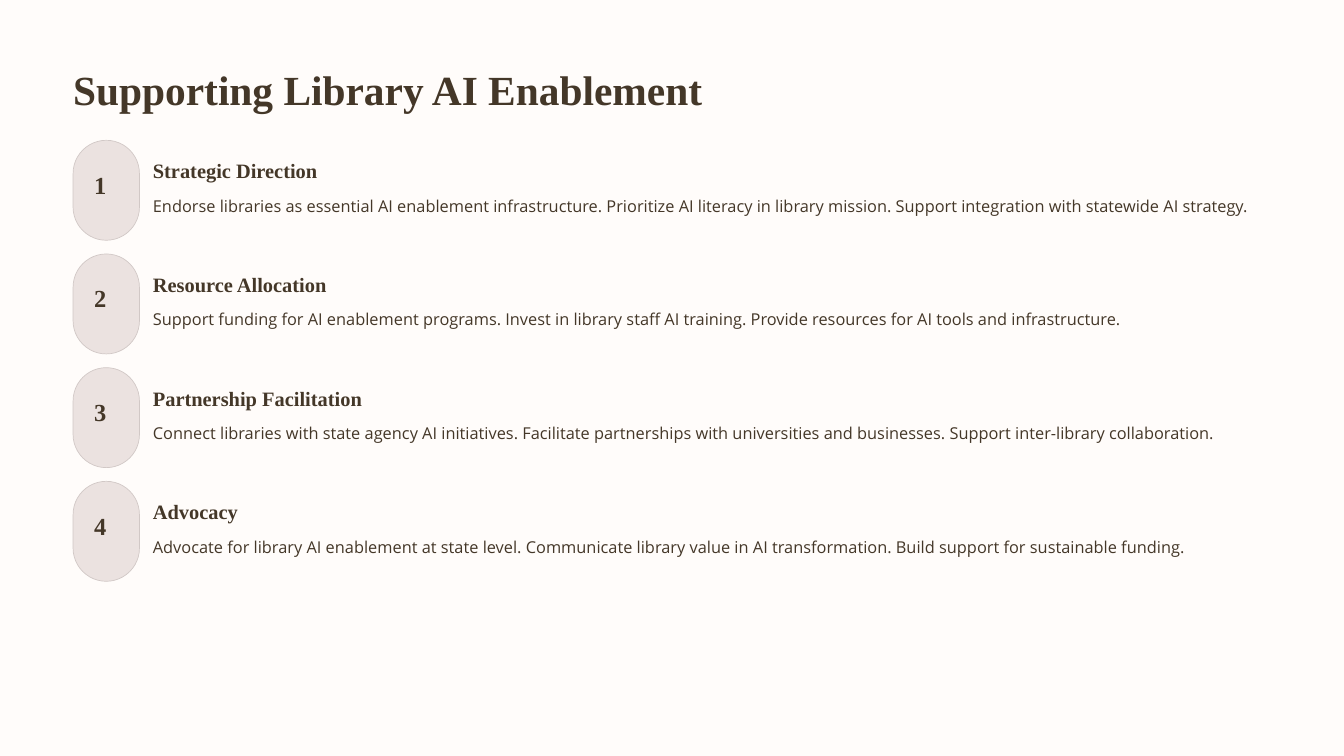
"""Build the slide on supporting library AI enablement."""
from pptx import Presentation
from pptx.dml.color import RGBColor
from pptx.enum.shapes import MSO_SHAPE
from pptx.enum.text import MSO_ANCHOR, MSO_AUTO_SIZE, PP_ALIGN
from pptx.util import Inches, Pt

PILL = MSO_SHAPE.ROUNDED_RECTANGLE
TOP = MSO_ANCHOR.TOP
LEFT = PP_ALIGN.LEFT
NO_AUTOFIT = MSO_AUTO_SIZE.NONE

TITLE = "Supporting Library AI Enablement"
SUPPORTS = [
    ("Strategic Direction",
     "Endorse libraries as essential AI enablement infrastructure. Prioritize AI literacy "
     "in library mission. Support integration with statewide AI strategy."),
    ("Resource Allocation",
     "Support funding for AI enablement programs. Invest in library staff AI training. "
     "Provide resources for AI tools and infrastructure."),
    ("Partnership Facilitation",
     "Connect libraries with state agency AI initiatives. Facilitate partnerships with "
     "universities and businesses. Support inter-library collaboration."),
    ("Advocacy",
     "Advocate for library AI enablement at state level. Communicate library value in AI "
     "transformation. Build support for sustainable funding."),
]

COLORS = {"background": "FFFCFA", "text": "443728", "pill": "EBE2E0", "outline": "D1C8C6"}
SERIF, SANS = "Times New Roman", "Open Sans"
MARGIN, TEXT_LEFT = 0.87, 1.82
FIRST_TOP, LAST_TOP = 1.67, 5.73
PITCH = (LAST_TOP - FIRST_TOP) / (len(SUPPORTS) - 1)


def color(name):
    return RGBColor.from_string(COLORS[name])


def write(holder, text, font, size, spacing, bold=True):
    frame = holder.text_frame
    frame.auto_size = NO_AUTOFIT
    frame.word_wrap = False
    frame.vertical_anchor = TOP
    frame.margin_left = frame.margin_right = frame.margin_top = frame.margin_bottom = 0
    paragraph = frame.paragraphs[0]
    paragraph.alignment = LEFT
    paragraph.line_spacing = Pt(spacing)
    run = paragraph.add_run()
    run.text = text
    run.font.name = font
    run.font.size = Pt(size)
    run.font.bold = bold
    run.font.color.rgb = color("text")


def add_text(slide, box, *style, **options):
    write(slide.shapes.add_textbox(*map(Inches, box)), *style, **options)


def add_support(slide, number, heading, detail):
    top = FIRST_TOP + (number - 1) * PITCH
    pill = slide.shapes.add_shape(PILL, *map(Inches, (MARGIN, top, 0.79, 1.19)))
    pill.adjustments[0] = 0.5
    pill.shadow.inherit = False
    pill.fill.solid()
    pill.fill.fore_color.rgb = color("pill")
    pill.line.color.rgb = color("outline")
    pill.line.width = Pt(0.6)
    add_text(slide, (1.12, top + 0.41, 0.3, 0.37), str(number), SERIF, 21, 21)
    add_text(slide, (TEXT_LEFT, top + 0.2, 2.5, 0.31), heading, SERIF, 17.5, 22)
    add_text(slide, (TEXT_LEFT, top + 0.61, 13.31, 0.29), detail, SANS, 14, 20.5, bold=False)


def main():
    deck = Presentation()
    deck.slide_width, deck.slide_height = Inches(16), Inches(9)
    slide = deck.slides.add_slide(deck.slide_layouts[5])
    slide.background.fill.solid()
    slide.background.fill.fore_color.rgb = color("background")

    title = slide.shapes.title
    title.left, title.top, title.width, title.height = map(Inches, (MARGIN, 0.74, 11.49, 0.62))
    write(title, TITLE, SERIF, 35.5, 44.5)

    for number, (heading, detail) in enumerate(SUPPORTS, 1):
        add_support(slide, number, heading, detail)
    deck.save("out.pptx")


if __name__ == "__main__":
    main()
